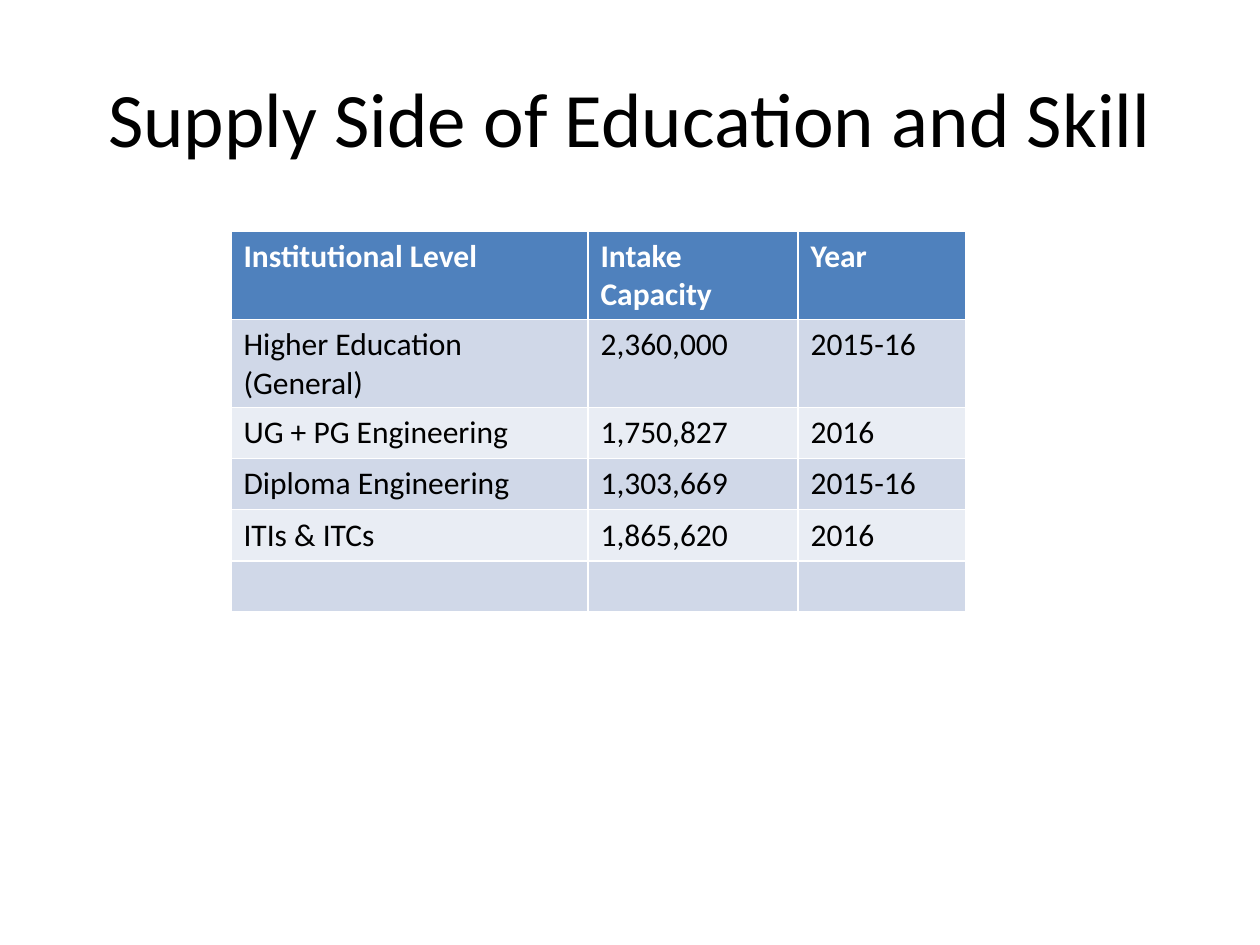
import pptx
import pptx.util
import pptx.dml.color
import pptx.enum.text

Pt = pptx.util.Pt


def paint(hue):
    return pptx.dml.color.RGBColor.from_string(hue)


def write(para, text, size, hue, bold=False):
    run = para.add_run()
    run.text = text
    run.font.name = "Calibri"
    run.font.size = Pt(size)
    run.font.bold = bold
    run.font.color.rgb = paint(hue)


deck = pptx.Presentation()
deck.slide_width, deck.slide_height = Pt(720), Pt(540)
slide = deck.slides.add_slide(deck.slide_layouts[6])

# Title
box = slide.shapes.add_textbox(Pt(36), Pt(21.6), Pt(648), Pt(90))
frame = box.text_frame
frame.word_wrap = True
frame.vertical_anchor = pptx.enum.text.MSO_ANCHOR.MIDDLE
title = frame.paragraphs[0]
title.alignment = pptx.enum.text.PP_ALIGN.CENTER
write(title, "Supply Side of Education and Skill", 44, "000000")

# Intake table; the default table style draws the white rules
rows = [
    ("Institutional Level", "Intake Capacity", "Year"),
    ("Higher Education (General)", "2,360,000", "2015-16"),
    ("UG + PG Engineering", "1,750,827", "2016"),
    ("Diploma Engineering", "1,303,669", "2015-16"),
    ("ITIs & ITCs", "1,865,620", "2016"),
    ("", "", ""),
]
widths = (204, 120, 96)
high = 29.2
table = slide.shapes.add_table(
    len(rows), len(widths), Pt(132), Pt(132), Pt(sum(widths)), Pt(high * len(rows))
).table
for col, width in zip(table.columns, widths):
    col.width = Pt(width)

for r, row in enumerate(rows):
    table.rows[r].height = Pt(high)
    head = r == 0
    fill = "4F81BD" if head else ("E9EDF4", "D0D8E8")[r % 2]
    for c, text in enumerate(row):
        cell = table.cell(r, c)
        cell.fill.solid()
        cell.fill.fore_color.rgb = paint(fill)
        para = cell.text_frame.paragraphs[0]
        if text:
            write(para, text, 18, "FFFFFF" if head else "000000", head)

deck.save("out.pptx")
